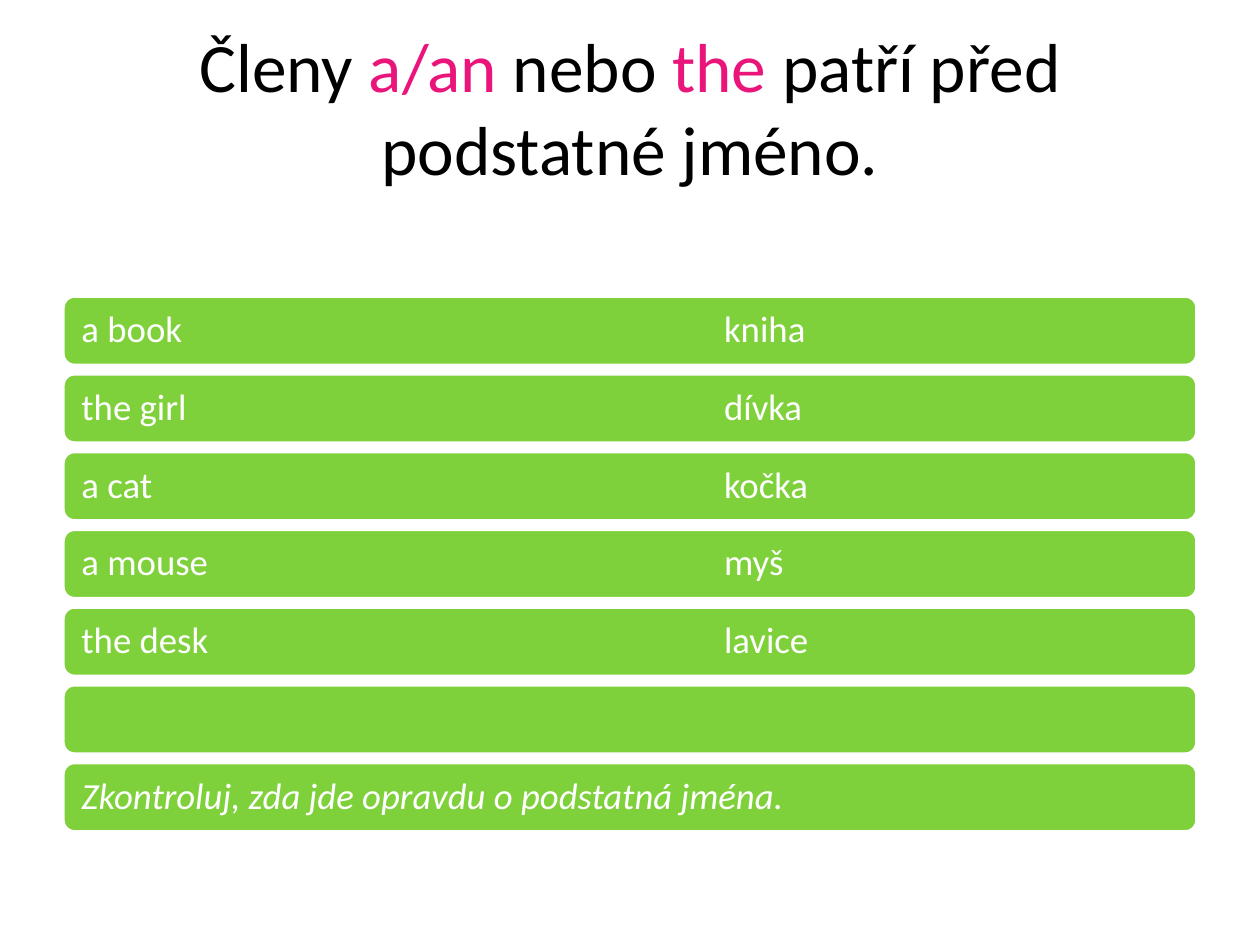
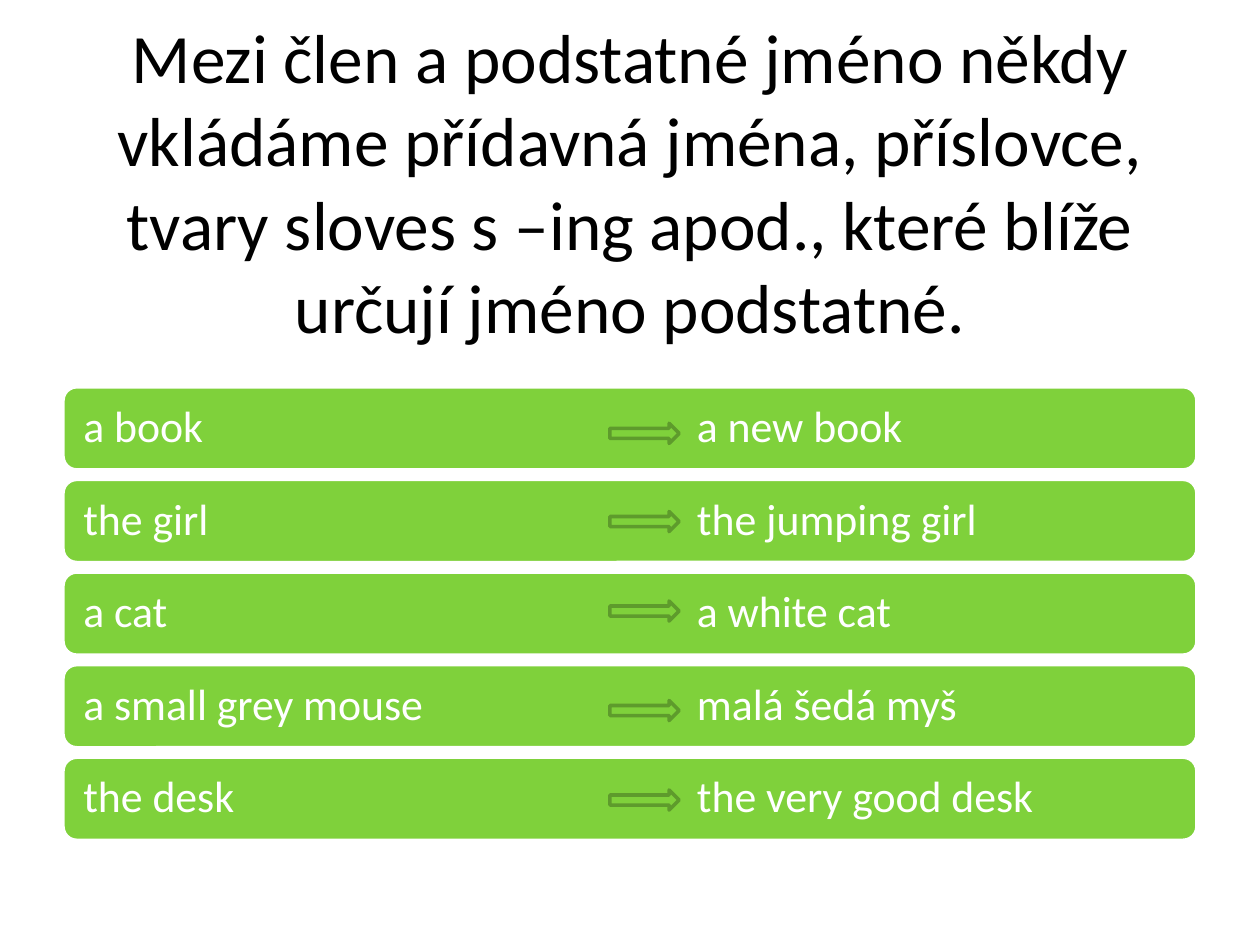
"""Build two slides on English articles: a title above a stack of green word rows."""
from lxml import etree
from pptx import Presentation
from pptx.dml.color import RGBColor
from pptx.enum.shapes import MSO_SHAPE
from pptx.enum.text import MSO_ANCHOR, MSO_AUTO_SIZE, PP_ALIGN
from pptx.oxml.ns import qn
from pptx.util import Inches, Pt

ROUNDED, ARROW = MSO_SHAPE.ROUNDED_RECTANGLE, MSO_SHAPE.RIGHT_ARROW
MIDDLE, NO_FIT = MSO_ANCHOR.MIDDLE, MSO_AUTO_SIZE.NONE
LEFT, CENTER = PP_ALIGN.LEFT, PP_ALIGN.CENTER
FONT = "Calibri"
BLACK, WHITE, PINK = "000000", "FFFFFF", "EA157A"
GREEN, DARK_GREEN = "7FD13B", "5E9B2C"
TITLE_ONLY = 5


def rgb(value):
    """Turn a hex string into a colour."""
    return RGBColor.from_string(value)


def add_block(slide, kind, left, top, width, height, outline):
    """Add a green preset shape with a 2 pt outline."""
    block = slide.shapes.add_shape(
        kind, Inches(left), Inches(top), Inches(width), Inches(height))
    block.shadow.inherit = False
    block.fill.solid()
    block.fill.fore_color.rgb = rgb(GREEN)
    block.line.color.rgb = rgb(outline)
    block.line.width = Pt(2)
    return block


lessons = [
    {
        "title": [("Členy ", BLACK), ("a/an", PINK), (" nebo ", BLACK),
                  ("the ", PINK), ("patří před podstatné jméno.", BLACK)],
        "title_height": 2.43, "title_bottom_margin": 1.39,
        "top": 2.35, "pitch": 0.617, "height": 0.55,
        "size": 21, "margin": 0.12, "tab": 5.1,
        "rows": ["a book\tkniha", "the girl\tdívka", "a cat\tkočka",
                 "a mouse\tmyš", "the desk\tlavice", "",
                 "Zkontroluj, zda jde opravdu o podstatná jména."],
        "italic_row": 6,
        "arrow_tops": [],
    },
    {
        "title": [("Mezi člen a podstatné jméno někdy vkládáme přídavná jména, "
                   "příslovce, tvary sloves s –ing apod., které blíže určují "
                   "jméno podstatné.", BLACK)],
        "title_height": 2.27, "title_bottom_margin": 0.05,
        "top": 3.07, "pitch": 0.735, "height": 0.66,
        "size": 25, "margin": 0.13, "tab": 4.87,
        "rows": ["a book\ta new book", "the girl\tthe jumping girl",
                 "a cat\ta white cat", "a small grey mouse\tmalá šedá myš",
                 "the desk\tthe very good desk"],
        "italic_row": None,
        "arrow_tops": [3.36, 4.06, 4.77, 5.56, 6.27],
    },
]

prs = Presentation()
prs.slide_width, prs.slide_height = Inches(10), Inches(7.5)

for lesson in lessons:
    slide = prs.slides.add_slide(prs.slide_layouts[TITLE_ONLY])

    title = slide.shapes.title
    title.left, title.top = Inches(0.5), Inches(0.3)
    title.width, title.height = Inches(9), Inches(lesson["title_height"])
    heading = title.text_frame
    heading.auto_size = NO_FIT
    heading.word_wrap = True
    heading.vertical_anchor = MIDDLE
    heading.margin_bottom = Inches(lesson["title_bottom_margin"])
    sentence = heading.paragraphs[0]
    sentence.alignment = CENTER
    sentence.font.name = FONT
    sentence.font.size = Pt(39.6)
    for words, color in lesson["title"]:
        run = sentence.add_run()
        run.text = words
        run.font.color.rgb = rgb(color)

    for index, entry in enumerate(lesson["rows"]):
        row_top = lesson["top"] + index * lesson["pitch"]
        row = add_block(slide, ROUNDED, 0.5, row_top, 9, lesson["height"], WHITE)
        if not entry:
            continue
        frame = row.text_frame
        frame.word_wrap = True
        frame.vertical_anchor = MIDDLE
        frame.margin_left = frame.margin_right = Inches(lesson["margin"])
        pair = frame.paragraphs[0]
        pair.text = entry
        pair.alignment = LEFT
        if "\t" in entry:
            tabs = etree.SubElement(pair._p.get_or_add_pPr(), qn("a:tabLst"))
            etree.SubElement(tabs, qn("a:tab"), pos=str(Inches(lesson["tab"])), algn="l")
        pair.line_spacing = 0.9
        pair.font.name = FONT
        pair.font.size = Pt(lesson["size"])
        pair.font.color.rgb = rgb(WHITE)
        pair.font.italic = index == lesson["italic_row"]

    for arrow_top in lesson["arrow_tops"]:
        add_block(slide, ARROW, 4.84, arrow_top, 0.55, 0.16, DARK_GREEN)

prs.save("out.pptx")
